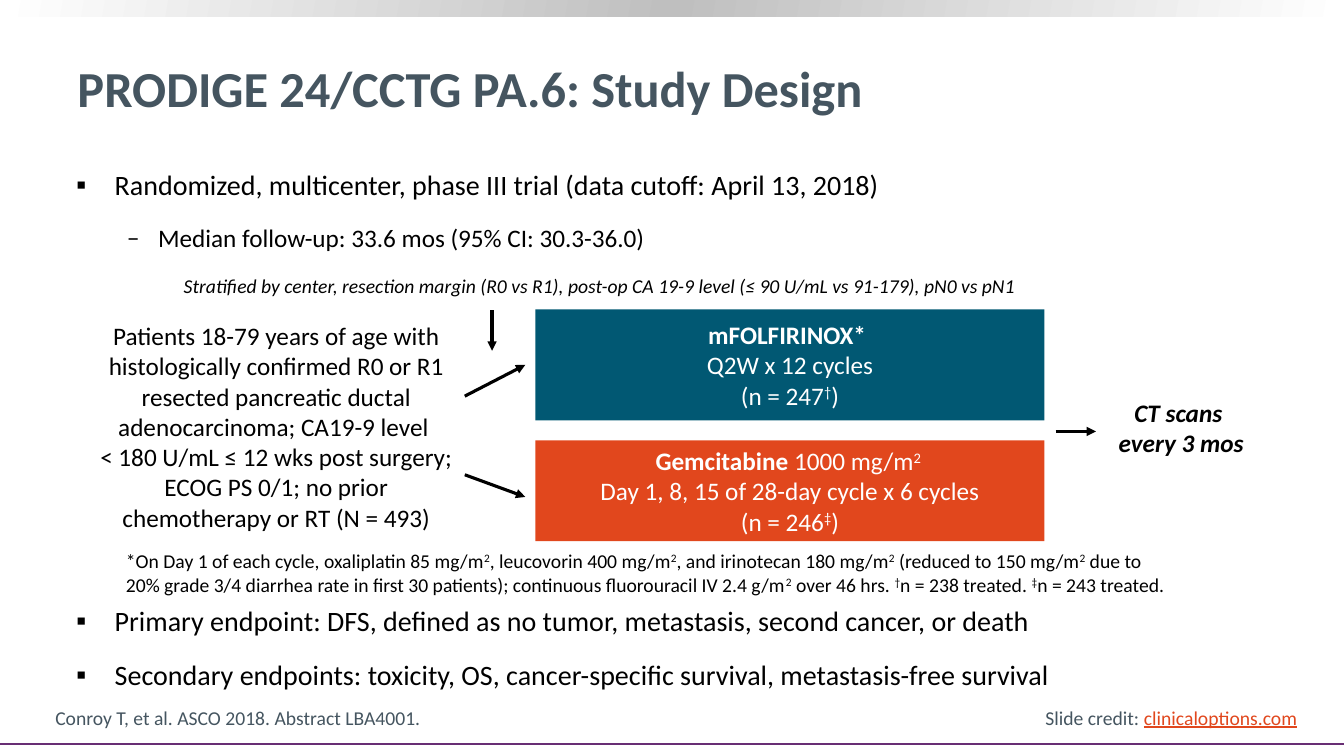
from copy import deepcopy
from lxml.etree import SubElement
from pptx import Presentation
from pptx.dml.color import RGBColor
from pptx.enum.shapes import MSO_CONNECTOR, MSO_SHAPE
from pptx.enum.text import MSO_ANCHOR, PP_ALIGN
from pptx.oxml.ns import qn
from pptx.util import Inches, Pt

COLORS = {
    "black": "000000", "white": "FFFFFF", "slate": "455560", "silver": "BFBFBF",
    "teal": "015873", "orange": "E1471D", "purple": "682E74",
}
FONT = "Calibri"
EMPHASIS, SUPERSCRIPT = "~", "^"
BULLETS = [
    {"symbol": "▪", "size": 20, "margin": 0.38, "hang": 0.38},
    {"symbol": "‒", "size": 18, "margin": 0.81, "hang": 0.31},
]

TITLE = "PRODIGE 24/CCTG PA.6: Study Design"
BULLET_BLOCKS = [
    ((0.66, 1.65, 11.9, 0.59), [
        (0, "Randomized, multicenter, phase III trial (data cutoff: April 13, 2018)"),
        (1, "Median follow-up: 33.6 mos (95% CI: 30.3-36.0)"),
    ]),
    ((0.66, 5.98, 11.9, 0.77), [
        (0, "Primary endpoint: DFS, defined as no tumor, metastasis, second cancer, or death"),
        (0, "Secondary endpoints: toxicity, OS, cancer-specific survival, metastasis-free survival"),
    ]),
]
STRATIFICATION = (
    "Stratified by center, resection margin (R0 vs R1), "
    "post-op CA 19-9 level (≤ 90 U/mL vs 91-179), pN0 vs pN1"
)
PATIENTS = (
    "Patients 18-79 years of age with histologically confirmed R0 or R1 resected "
    "pancreatic ductal adenocarcinoma; CA19-9 level \n"
    "< 180 U/mL ≤ 12 wks post surgery; ECOG PS 0/1; no prior chemotherapy or RT (N = 493)"
)
ARMS = [
    ("teal", 3.07, 1.1, ["~mFOLFIRINOX* ~", "Q2W x 12 cycles", "(n = 247^†^)"]),
    ("orange", 4.37, 1.0, ["~Gemcitabine ~1000 mg/m^2 ^",
                           "Day 1, 8, 15 of 28-day cycle x 6 cycles", "(n = 246^‡^)"]),
]
FOLLOW_UP = ["CT scans ", "every 3 mos"]
FOOTNOTE = [
    "*On Day 1 of each cycle, oxaliplatin 85 mg/m^2^, leucovorin 400 mg/m^2^, "
    "and irinotecan 180 mg/m^2^ (reduced to 150 mg/m^2^ due to",
    "20% grade 3/4 diarrhea rate in first 30 patients); continuous fluorouracil IV "
    "2.4 g/m^2^ over 46 hrs. ^†^n = 238 treated. ^‡^n = 243 treated.",
]
CITATION = "Conroy T, et al. ASCO 2018. Abstract LBA4001."
CREDIT = "Slide credit: ~clinicaloptions.com~"
ARROWS = [
    (4.88, 3.08, 4.88, 3.48),
    (4.61, 3.93, 5.21, 3.62),
    (4.61, 4.71, 5.21, 4.93),
    (10.47, 4.28, 10.87, 4.28),
]


def color(name):
    return RGBColor.from_string(COLORS[name])


def style_font(font, size=18, ink="black", bold=False, italic=False, underline=False):
    font.name, font.size = FONT, Pt(size)
    font.bold, font.italic, font.underline = bold, italic, underline
    font.color.rgb = color(ink)


def add_runs(paragraph, text, style, emphasis):
    for piece_index, piece in enumerate(text.split(EMPHASIS)):
        piece_style = {**style, **emphasis} if piece_index % 2 else style
        for part_index, part in enumerate(piece.split(SUPERSCRIPT)):
            for line_index, line in enumerate(part.split("\n")):
                if line_index:
                    paragraph.add_line_break()
                if line:
                    run = paragraph.add_run()
                    run.text = line
                    style_font(run.font, **piece_style)
                    if part_index % 2:
                        run.font._element.set("baseline", "30000")


def write(shape, lines, align=PP_ALIGN.LEFT, anchor=MSO_ANCHOR.TOP, wrap=True,
          spacing=None, emphasis={"bold": True}, **style):
    frame = shape.text_frame
    frame.word_wrap, frame.vertical_anchor = wrap, anchor
    for index, line in enumerate(lines):
        paragraph = frame.add_paragraph() if index else frame.paragraphs[0]
        paragraph.alignment, paragraph.line_spacing = align, spacing
        add_runs(paragraph, line, style, emphasis)


def write_bullets(shape, items):
    frame = shape.text_frame
    frame.word_wrap = True
    for index, (level, text) in enumerate(items):
        bullet = BULLETS[level]
        paragraph = frame.add_paragraph() if index else frame.paragraphs[0]
        paragraph.level, paragraph.line_spacing = level, 0.9
        paragraph.space_before, paragraph.space_after = Pt(10 if index else 0), Pt(7)
        properties = paragraph._p.get_or_add_pPr()
        properties.set("marL", str(Inches(bullet["margin"])))
        properties.set("indent", str(-Inches(bullet["hang"])))
        bullet_color = SubElement(properties, qn("a:buClr"))
        SubElement(bullet_color, qn("a:srgbClr"), val=COLORS["black"])
        SubElement(properties, qn("a:buFont"), typeface=FONT)
        SubElement(properties, qn("a:buChar"), char=bullet["symbol"])
        add_runs(paragraph, text, {"size": bullet["size"]}, {})


def add_text(slide, box, lines, **style):
    write(slide.shapes.add_textbox(*map(Inches, box)), lines, **style)


def add_rectangle(slide, box):
    shape = slide.shapes.add_shape(MSO_SHAPE.RECTANGLE, *map(Inches, box))
    shape.shadow.inherit = False
    shape.line.fill.background()
    return shape


def add_line(slide, ends, ink, width, arrow=False):
    connector = slide.shapes.add_connector(MSO_CONNECTOR.STRAIGHT, *map(Inches, ends))
    connector.line.color.rgb = color(ink)
    connector.line.width = Pt(width)
    if arrow:
        SubElement(connector.line._get_or_add_ln(), qn("a:tailEnd"), type="triangle")
    SubElement(connector._element.spPr, qn("a:effectLst"))


def add_top_band(slide):
    band = add_rectangle(slide, (0, 0, 13.33, 0.16))
    band.fill.gradient()
    band.fill.gradient_angle = 170
    stop_list = band._element.spPr.find(".//" + qn("a:gsLst"))
    stop_list.append(deepcopy(stop_list[-1]))
    stops = zip(band.fill.gradient_stops, (0, 0.5, 1), ("white", "silver", "white"))
    for stop, position, ink in stops:
        stop.position = position
        stop.color.rgb = color(ink)


def main():
    presentation = Presentation()
    presentation.slide_width, presentation.slide_height = Inches(13.33), Inches(7.5)
    slide = presentation.slides.add_slide(presentation.slide_layouts[6])

    add_line(slide, (0, 7.38, 13.33, 7.38), "purple", 1.5)
    add_top_band(slide)
    add_text(slide, (0.67, 0.26, 11.89, 1.21), [TITLE], size=36, ink="slate",
             bold=True, anchor=MSO_ANCHOR.MIDDLE)
    for box, items in BULLET_BLOCKS:
        write_bullets(slide.shapes.add_textbox(*map(Inches, box)), items)

    add_text(slide, (0.93, 2.69, 10.04, 0.31), [STRATIFICATION], size=14,
             italic=True, align=PP_ALIGN.CENTER, spacing=0.9)
    add_text(slide, (0.82, 3.13, 3.84, 2.22), [PATIENTS], align=PP_ALIGN.CENTER)
    for fill, top, height, lines in ARMS:
        arm = add_rectangle(slide, (5.31, top, 5.05, height))
        arm.fill.solid()
        arm.fill.fore_color.rgb = color(fill)
        write(arm, lines, ink="white", align=PP_ALIGN.CENTER,
              anchor=MSO_ANCHOR.MIDDLE, wrap=False)
    for ends in ARROWS:
        add_line(slide, ends, "black", 2.25, arrow=True)
    add_text(slide, (10.59, 3.89, 2.25, 0.71), FOLLOW_UP, bold=True, italic=True,
             align=PP_ALIGN.CENTER)

    add_text(slide, (1.15, 5.4, 10.78, 0.57), FOOTNOTE, size=14)
    add_text(slide, (0.45, 6.95, 8.76, 0.34), [CITATION], size=14, ink="slate",
             anchor=MSO_ANCHOR.BOTTOM)
    add_text(slide, (10.27, 6.95, 2.72, 0.34), [CREDIT], size=14, ink="slate",
             wrap=False, emphasis={"ink": "orange", "underline": True})
    presentation.save("out.pptx")


if __name__ == "__main__":
    main()
